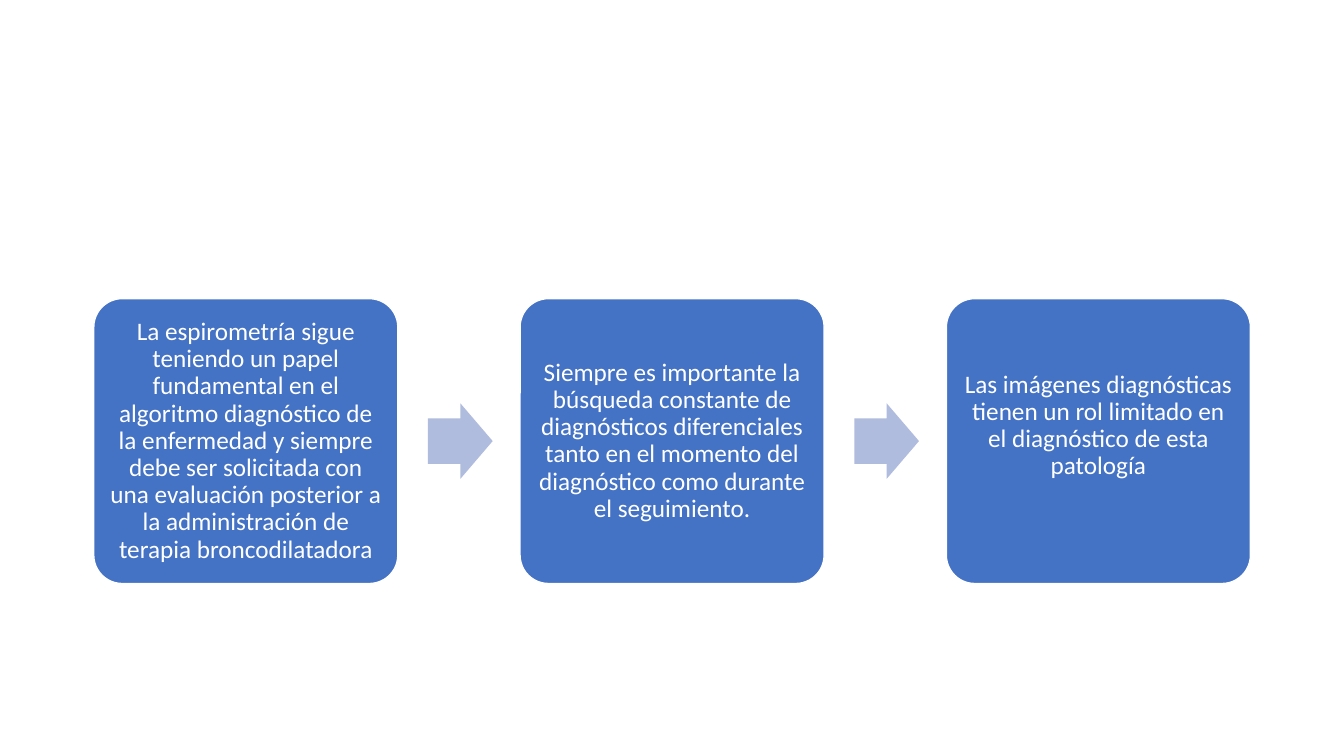
from pptx import Presentation
from pptx.dml.color import RGBColor
from pptx.enum.shapes import MSO_SHAPE
from pptx.enum.text import MSO_ANCHOR, PP_ALIGN
from pptx.util import Pt

ROUND_RECT = MSO_SHAPE.ROUNDED_RECTANGLE
RIGHT_ARROW = MSO_SHAPE.RIGHT_ARROW
MIDDLE = MSO_ANCHOR.MIDDLE
CENTER = PP_ALIGN.CENTER

BLUE, PALE_BLUE, WHITE = "4472C4", "B0BCDE", "FFFFFF"
CARD_W, CARD_STEP = 217.2, 304.5
ARROW_W, ARROW_H = 46.2, 54
INSET = 5

# Text and extra space below it
CONCLUSIONS = [
    ("La espirometría sigue teniendo un papel fundamental en el algoritmo "
     "diagnóstico de la enfermedad y siempre debe ser solicitada con una "
     "evaluación posterior a la administración de terapia broncodilatadora", 0),
    ("Siempre es importante la búsqueda constante de diagnósticos diferenciales "
     "tanto en el momento del diagnóstico como durante el seguimiento.", 0),
    ("Las imágenes diagnósticas tienen un rol limitado en el diagnóstico de "
     "esta patología", 22),
]


def color(hex_value):
    return RGBColor.from_string(hex_value)


def add_filled(slide, kind, x, y, w, h, fill):
    s = slide.shapes.add_shape(kind, Pt(x), Pt(y), Pt(w), Pt(h))
    s.shadow.inherit = False
    s.fill.solid()
    s.fill.fore_color.rgb = color(fill)
    s.line.fill.background()
    return s


def add_card(slide, x, y, w, h, text, space_below):
    s = add_filled(slide, ROUND_RECT, x, y, w, h, BLUE)
    s.adjustments[0] = 0.1
    s.line.color.rgb = color(WHITE)
    s.line.width = Pt(1)
    tf = s.text_frame
    tf.word_wrap = True
    tf.vertical_anchor = MIDDLE
    tf.margin_left = tf.margin_right = tf.margin_top = Pt(INSET)
    tf.margin_bottom = Pt(INSET + space_below)
    tf.text = text
    p = tf.paragraphs[0]
    p.alignment = CENTER
    p.line_spacing = 0.9
    font = p.runs[0].font
    font.name = "Calibri"
    font.size = Pt(18)
    font.color.rgb = color(WHITE)


def add_arrow(slide, x, y):
    s = add_filled(slide, RIGHT_ARROW, x, y, ARROW_W, ARROW_H, PALE_BLUE)
    s.adjustments[0] = 0.6
    s.adjustments[1] = 0.5


def add_process(slide, x, y, h):
    """Place the cards in a row, with an arrow in each gap."""
    for i, (text, space_below) in enumerate(CONCLUSIONS):
        card_x = x + i * CARD_STEP
        if i:
            gap = CARD_STEP - CARD_W
            arrow_x = card_x - gap + (gap - ARROW_W) / 2
            add_arrow(slide, arrow_x + 1, y + (h - ARROW_H) / 2)
        add_card(slide, card_x, y, CARD_W, h, text, space_below)


def main():
    prs = Presentation()
    prs.slide_width, prs.slide_height = Pt(960), Pt(540)
    slide = prs.slides.add_slide(prs.slide_layouts[6])
    add_process(slide, 67, 213.3, 203.5)
    prs.save("out.pptx")


if __name__ == "__main__":
    main()
